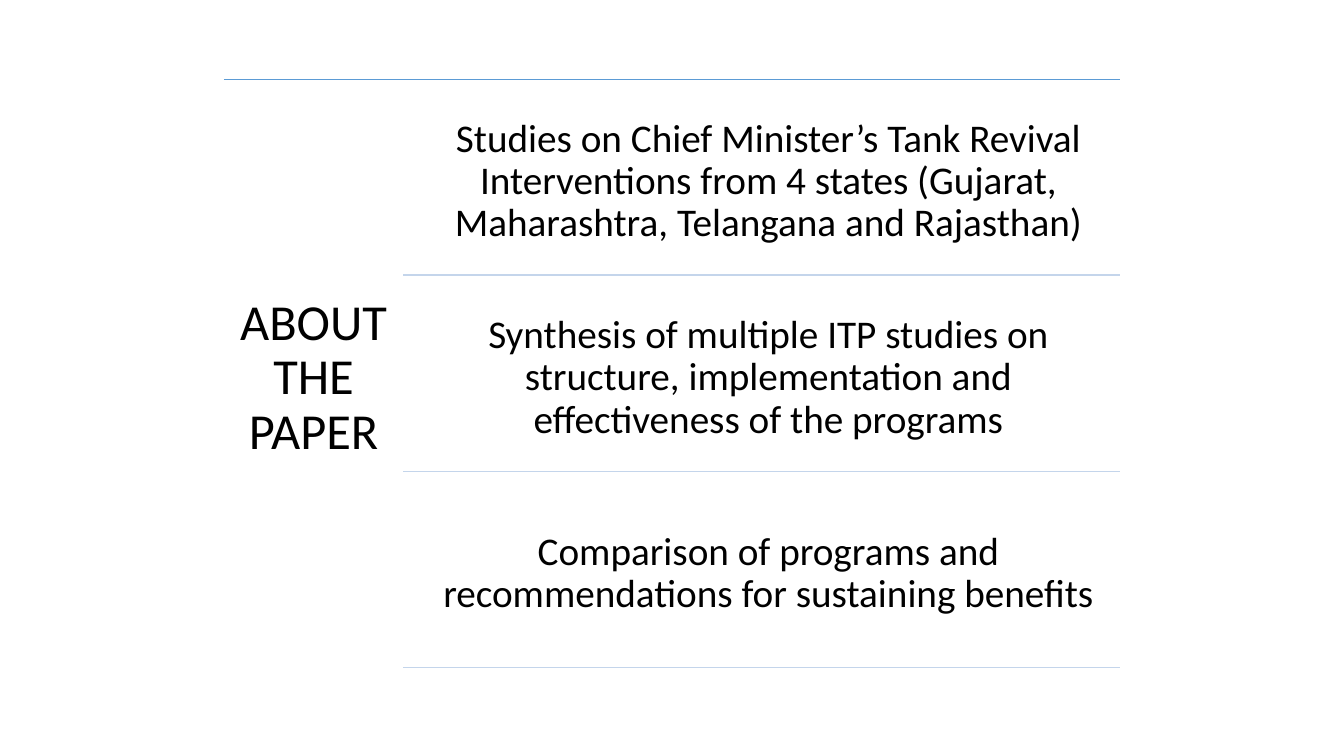
from lxml import etree
from pptx import Presentation
from pptx import util as u
from pptx.dml import color
from pptx.enum import shapes, text
from pptx.oxml import ns

FINDINGS = [
    "Studies on Chief Minister’s Tank Revival Interventions from 4 states "
    "(Gujarat, Maharashtra, Telangana and Rajasthan)",
    "Synthesis of multiple ITP studies on structure, implementation and "
    "effectiveness of the programs",
    "Comparison of programs and recommendations for sustaining benefits",
]
LEFT, RIGHT, TOP = 2.22, 11.11, 0.79
RULE_LEFT, TEXT_LEFT = 4, 4.13
FIRST_TOP, ROW_HEIGHT = 0.88, 1.85
ROW_PITCH = (6.62 - 2.73) / 2


def rgb(value):
    return color.RGBColor.from_string(value)


class PaperSlide:
    font = "Calibri"
    ink = "000000"

    def __init__(self, presentation):
        self.slide = presentation.slides.add_slide(presentation.slide_layouts[5])

    def format_text(self, shape, content, size, inset):
        frame = shape.text_frame
        frame.text = content
        frame.word_wrap = True
        frame.auto_size = text.MSO_AUTO_SIZE.NONE
        frame.vertical_anchor = text.MSO_ANCHOR.MIDDLE
        frame.margin_left = frame.margin_right = u.Inches(inset)
        frame.margin_top = frame.margin_bottom = u.Inches(inset)
        paragraph = frame.paragraphs[0]
        paragraph.alignment = text.PP_ALIGN.CENTER
        paragraph.line_spacing = 0.9
        for run in paragraph.runs:
            run.font.name = self.font
            run.font.size = u.Pt(size)
            run.font.color.rgb = rgb(self.ink)

    def title(self, content, left, top, width, height):
        shape = self.slide.shapes.title
        shape.left, shape.top = u.Inches(left), u.Inches(top)
        shape.width, shape.height = u.Inches(width), u.Inches(height)
        self.format_text(shape, content, 36, 0.15)

    def finding(self, content, left, top, width, height):
        shape = self.slide.shapes.add_textbox(
            u.Inches(left), u.Inches(top), u.Inches(width), u.Inches(height))
        self.format_text(shape, content, 28, 0.12)

    def rule(self, left, right, top, line_color, width):
        connector = self.slide.shapes.add_connector(
            shapes.MSO_CONNECTOR.STRAIGHT,
            u.Inches(left), u.Inches(top), u.Inches(right), u.Inches(top))
        connector.line.color.rgb = rgb(line_color)
        connector.line.width = u.Pt(width)
        etree.SubElement(connector._element.spPr, ns.qn("a:effectLst"))


def main():
    presentation = Presentation()
    presentation.slide_width = u.Inches(13.33)
    presentation.slide_height = u.Inches(7.5)
    paper = PaperSlide(presentation)
    paper.rule(LEFT, RIGHT, TOP, "5B9BD5", 0.5)
    paper.title("ABOUT THE PAPER", LEFT, TOP, RULE_LEFT - LEFT, 5.93)
    for index, finding in enumerate(FINDINGS):
        top = FIRST_TOP + index * ROW_PITCH
        paper.finding(finding, TEXT_LEFT, top, RIGHT - TEXT_LEFT, ROW_HEIGHT)
        paper.rule(RULE_LEFT, RIGHT, top + ROW_HEIGHT, "C4D5EB", 1)
    presentation.save("out.pptx")


if __name__ == "__main__":
    main()
